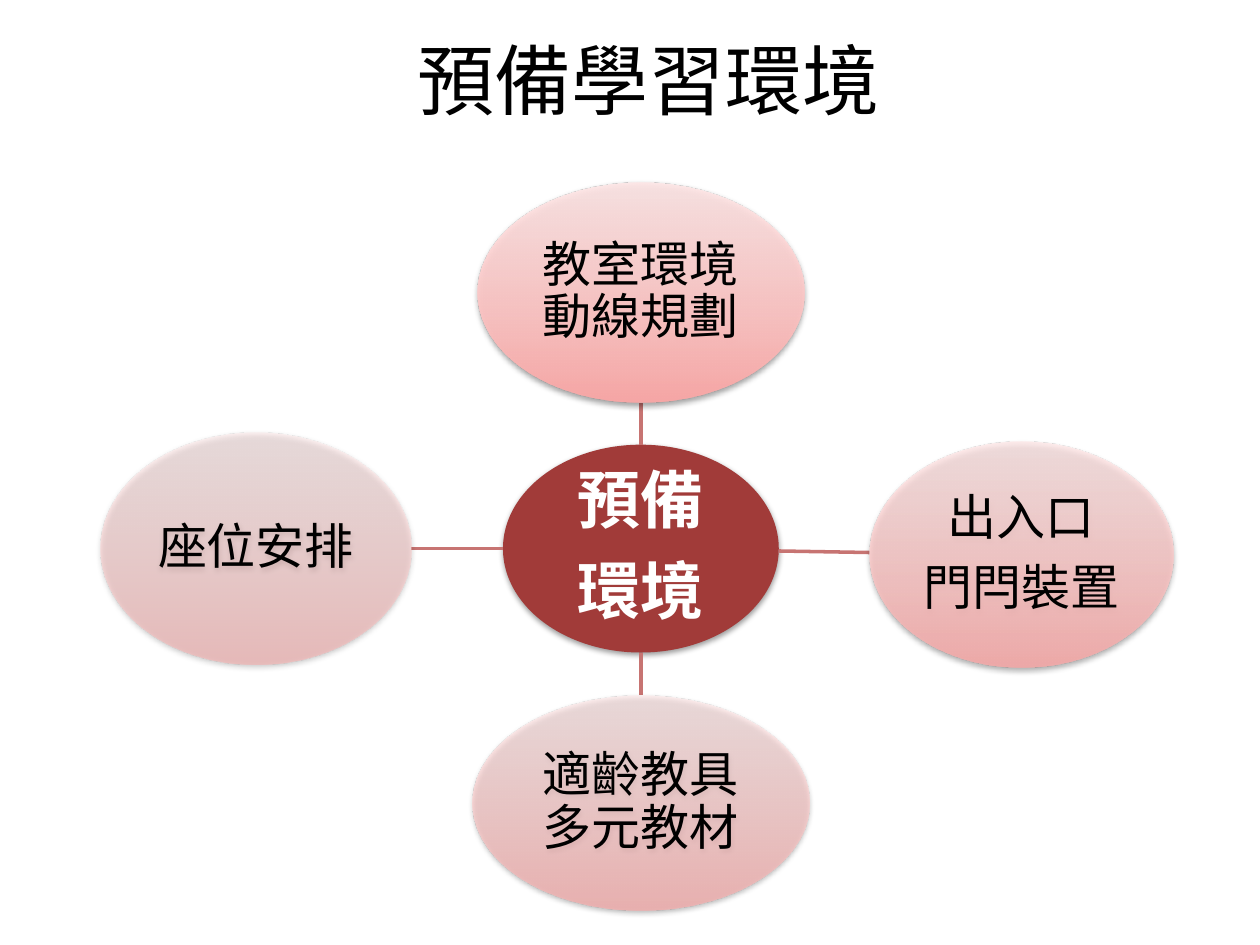
import math

from pptx import Presentation
from pptx import util as u
from pptx.dml.color import RGBColor
from pptx.enum import shapes, text
from pptx.oxml import parse_xml
from pptx.oxml.ns import nsdecls, qn

FONT = "Noto Sans CJK SC"
COLORS = {"ink": "000000", "white": "FFFFFF", "hub": "A13B39", "line": "C77472",
          "bottom": "FFA6A5", "middle": "FFC0BF", "top": "FFE7E7"}
STOPS = [(0, "bottom"), (35, "middle"), (100, "top")]
HUB_FONT = {"size": u.Pt(36), "bold": True}
NODE_FONT = {"size": u.Pt(28), "bold": False}
TITLE_FONT = {"size": u.Pt(44), "bold": False}

# Ovals: centre x, centre y, width, height in cm
HUB = (12.92, 11.06, 5.56, 4.19)
NODES = [  # oval, fill opacity in percent, paragraphs
    ((12.92, 5.9, 6.58, 4.45), 90, ["教室環境動線規劃"]),
    ((20.59, 11.19, 6.12, 4.55), 77, ["出入口", "門閂裝置"]),
    ((12.92, 16.19, 6.78, 4.34), 63, ["適齡教具多元教材"]),
    ((5.16, 11.06, 6.25, 4.67), 50, ["座位安排"]),
]


def rgb(name):
    return RGBColor.from_string(COLORS[name])


def set_all(obj, values):
    for name, value in values.items():
        setattr(obj, name, value)


def edge_point(oval, target):
    """Point where the line from an oval's centre to the target's leaves the oval."""
    x, y, w, h = oval
    dx, dy = target[0] - x, target[1] - y
    t = 1 / math.hypot(dx / (w / 2), dy / (h / 2))
    return u.Cm(x + dx * t), u.Cm(y + dy * t)


class Diagram:
    def __init__(self, slide):
        self.s = slide

    def add_text(self, tf, lines, font, color):
        for i, line in enumerate(lines):
            p = tf.paragraphs[0] if i == 0 else tf.add_paragraph()
            p.alignment = text.PP_ALIGN.CENTER
            r = p.add_run()
            r.text = line
            set_all(r.font, {"name": FONT, **font})
            r.font.color.rgb = rgb(color)
            latin = r._r.rPr.find(qn("a:latin"))
            latin.addnext(parse_xml(f'<a:ea {nsdecls("a")} typeface="{FONT}"/>'))

    def title(self, line):
        sp = self.s.shapes.title
        set_all(sp, {"left": u.Cm(1.65), "top": u.Cm(0),
                     "width": u.Cm(22.86), "height": u.Cm(3.18)})
        sp.text_frame.vertical_anchor = text.MSO_ANCHOR.MIDDLE
        self.add_text(sp.text_frame, [line], TITLE_FONT, "ink")

    def oval(self, oval, lines, font, color, inset):
        x, y, w, h = oval
        sp = self.s.shapes.add_shape(
            shapes.MSO_SHAPE.OVAL, u.Cm(x - w / 2), u.Cm(y - h / 2), u.Cm(w), u.Cm(h))
        sp.line.fill.background()
        self.soft_shadow(sp)
        tf = sp.text_frame
        set_all(tf, {"word_wrap": True, "vertical_anchor": text.MSO_ANCHOR.MIDDLE})
        set_all(tf, {f"margin_{side}": u.Cm(inset)
                     for side in ("left", "top", "right", "bottom")})
        self.add_text(tf, lines, font, color)
        for p in tf.paragraphs:
            set_all(p, {"line_spacing": 0.9, "space_after": u.Pt(0.35 * font["size"].pt)})
        return sp

    def soft_shadow(self, sp):
        sp.shadow.inherit = False
        sp._element.spPr.find(qn("a:effectLst")).append(parse_xml(
            f'<a:outerShdw {nsdecls("a")} blurRad="40000" dist="20000" dir="5400000" '
            'rotWithShape="0"><a:srgbClr val="000000"><a:alpha val="38000"/></a:srgbClr>'
            '</a:outerShdw>'))

    def hub(self, oval, lines):
        sp = self.oval(oval, lines, HUB_FONT, "white", 0.08)
        sp.fill.solid()
        sp.fill.fore_color.rgb = rgb("hub")

    def node(self, oval, opacity, lines):
        sp = self.oval(oval, lines, NODE_FONT, "ink", 0.05)
        sp.fill.gradient()
        sp.fill.gradient_angle = 90
        stops = sp._element.spPr.find(qn("a:gradFill")).find(qn("a:gsLst"))
        for old in list(stops):
            stops.remove(old)
        for pos, name in STOPS:
            stops.append(parse_xml(
                f'<a:gs {nsdecls("a")} pos="{pos * 1000}"><a:srgbClr val="{COLORS[name]}">'
                f'<a:alpha val="{opacity * 1000}"/></a:srgbClr></a:gs>'))

    def spoke(self, start, end):
        c = self.s.shapes.add_connector(
            shapes.MSO_CONNECTOR.STRAIGHT, *edge_point(start, end), *edge_point(end, start))
        c.line.width = u.Pt(2)
        c.line.color.rgb = rgb("line")
        c._element.spPr.append(parse_xml(f'<a:effectLst {nsdecls("a")}/>'))


def main():
    prs = Presentation()
    prs.slide_width, prs.slide_height = u.Cm(25.4), u.Cm(19.05)
    d = Diagram(prs.slides.add_slide(prs.slide_layouts[5]))

    # Title and centre
    d.title("預備學習環境")
    d.hub(HUB, ["預備", "環境"])

    # Surrounding ovals, each joined to the centre
    for oval, opacity, lines in NODES:
        d.spoke(HUB, oval)
        d.node(oval, opacity, lines)

    prs.save("out.pptx")


if __name__ == "__main__":
    main()
